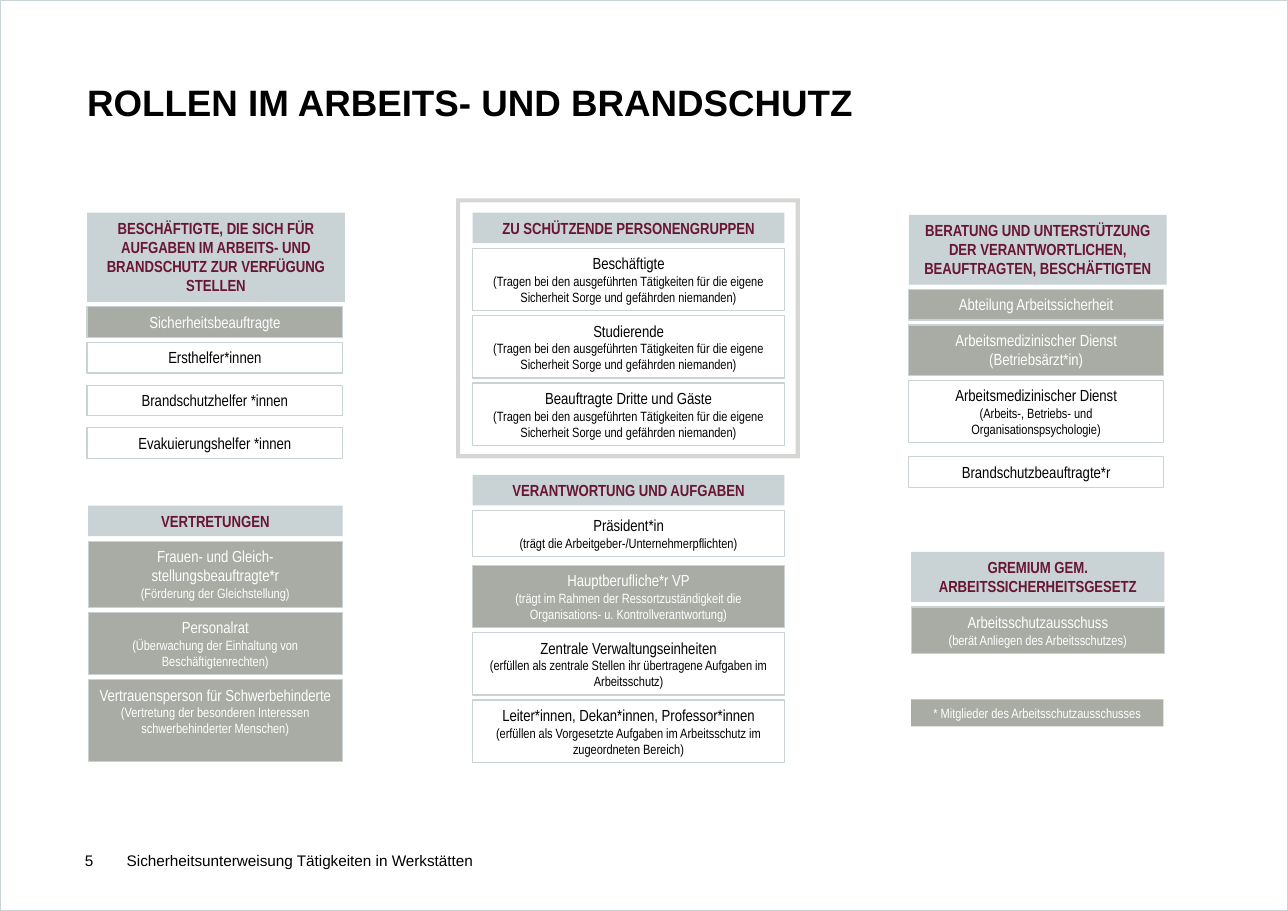
from dataclasses import dataclass

from pptx import Presentation
from pptx import util as u
from pptx.dml.color import RGBColor
from pptx.enum import shapes, text


@dataclass(frozen=True)
class Theme:
    black: str = "000000"
    white: str = "FFFFFF"
    wine: str = "691633"
    mist: str = "C9D2D5"
    stone: str = "A8ACA5"
    frame: str = "D6D7D4"
    body_font: str = "Arial Narrow"
    title_font: str = "Arial"
    title_size: float = 24
    role_size: float = 10.5
    detail_size: float = 8.8
    footer_size: float = 10


@dataclass(frozen=True)
class Role:
    name: str
    detail: str = ""
    member: bool = False  # sits on the committee, shown on stone
    name_lines: int = 1
    detail_lines: int = 0
    gap: float = 0.54


@dataclass(frozen=True)
class Group:
    heading: str
    heading_lines: int
    left: float
    top: float
    width: float
    heading_width: float
    roles: tuple


THEME = Theme()
WIDTH, HEIGHT = u.Inches(11.69), u.Inches(8.27)
# Row heights in percent of the slide's height
PADDING, NAME_LINE, DETAIL_LINE = 1.21, 2.15, 1.75

CARE = ("(Tragen bei den ausgeführten Tätigkeiten für die eigene "
        "Sicherheit Sorge und gefährden niemanden)")

# Positions and widths in percent of the slide
GROUPS = (
    Group("BESCHÄFTIGTE, DIE SICH FÜR AUFGABEN IM ARBEITS- UND BRANDSCHUTZ "
          "ZUR VERFÜGUNG STELLEN", 4, 6.76, 23.34, 19.85, 20.02, (
              Role("Sicherheitsbeauftragte", member=True),
              Role("Ersthelfer*innen"),
              Role("Brandschutzhelfer *innen", gap=1.33),
              Role("Evakuierungshelfer *innen", gap=1.33))),
    Group("VERTRETUNGEN", 1, 6.84, 55.5, 19.76, 19.76, (
        Role("Frauen- und Gleich-stellungsbeauftragte*r",
             "(Förderung der Gleichstellung)", True, 2, 1),
        Role("Personalrat",
             "(Überwachung der Einhaltung von Beschäftigtenrechten)", True, 1, 2),
        Role("Vertrauensperson für Schwerbehinderte",
             "(Vertretung der besonderen Interessen schwerbehinderter Menschen)",
             True, 2, 2))),
    Group("ZU SCHÜTZENDE PERSONENGRUPPEN", 1, 36.7, 23.34, 24.21, 24.21, tuple(
        Role(name, CARE, detail_lines=2)
        for name in ("Beschäftigte", "Studierende", "Beauftragte Dritte und Gäste"))),
    Group("VERANTWORTUNG UND AUFGABEN", 1, 36.7, 52.12, 24.21, 24.21, (
        Role("Präsident*in", "(trägt die Arbeitgeber-/Unternehmerpflichten)",
             detail_lines=1),
        Role("Hauptberufliche*r VP",
             "(trägt im Rahmen der Ressortzuständigkeit die "
             "Organisations- u. Kontrollverantwortung)", True, 1, 2, 0.91),
        Role("Zentrale Verwaltungseinheiten",
             "(erfüllen als zentrale Stellen ihr übertragene Aufgaben im "
             "Arbeitsschutz)", detail_lines=2),
        Role("Leiter*innen, Dekan*innen, Professor*innen",
             "(erfüllen als Vorgesetzte Aufgaben im Arbeitsschutz im "
             "zugeordneten Bereich)", detail_lines=2))),
    Group("BERATUNG UND UNTERSTÜTZUNG DER VERANTWORTLICHEN, BEAUFTRAGTEN, "
          "BESCHÄFTIGTEN", 3, 70.57, 23.58, 19.76, 20.02, (
              Role("Abteilung Arbeitssicherheit", member=True),
              Role("Arbeitsmedizinischer Dienst (Betriebsärzt*in)",
                   member=True, name_lines=2),
              Role("Arbeitsmedizinischer Dienst",
                   "(Arbeits-, Betriebs- und Organisationspsychologie)",
                   detail_lines=2),
              Role("Brandschutzbeauftragte*r", gap=1.57))),
    Group("GREMIUM GEM. ARBEITSSICHERHEITSGESETZ", 2, 70.74, 60.58, 19.67, 19.67, (
        Role("Arbeitsschutzausschuss", "(berät Anliegen des Arbeitsschutzes)",
             True, 1, 1),)),
)


def place(left, top, width, height):
    """Turn percentages of the slide into lengths."""
    return (int(WIDTH * left / 100), int(HEIGHT * top / 100),
            int(WIDTH * width / 100), int(HEIGHT * height / 100))


def row_height(name_lines, detail_lines=0):
    return PADDING + name_lines * NAME_LINE + detail_lines * DETAIL_LINE


def set_all(target, values):
    for key, value in values.items():
        setattr(target, key, value)


def write(paragraph, words, size, color, font=THEME.body_font, bold=False):
    run = paragraph.add_run()
    run.text = words
    set_all(run.font, {"name": font, "size": u.Pt(size), "bold": bold})
    run.font.color.rgb = RGBColor.from_string(color)


def add_outline(slide, kind, area, fill=None, line=None, weight=0.75):
    outline = slide.shapes.add_shape(kind, *place(*area))
    outline.shadow.inherit = False
    if fill:
        outline.fill.solid()
        outline.fill.fore_color.rgb = RGBColor.from_string(fill)
    else:
        outline.fill.background()
    if line:
        outline.line.color.rgb = RGBColor.from_string(line)
        outline.line.width = u.Pt(weight)
    else:
        outline.line.fill.background()
    return outline


def add_box(slide, area, lines, color, fill=None, line=None, bold=False):
    """Box with centred lines, each given as words and size."""
    box = add_outline(slide, shapes.MSO_SHAPE.RECTANGLE, area, fill, line)
    frame = box.text_frame
    set_all(frame, {"word_wrap": True, "vertical_anchor": text.MSO_ANCHOR.TOP})
    for number, (words, size) in enumerate(lines):
        paragraph = frame.add_paragraph() if number else frame.paragraphs[0]
        paragraph.alignment = text.PP_ALIGN.CENTER
        write(paragraph, words, size, color, bold=bold)


def add_group(slide, group):
    height = row_height(group.heading_lines)
    add_box(slide, (group.left, group.top, group.heading_width, height),
            [(group.heading, THEME.role_size)], THEME.wine, THEME.mist, bold=True)
    top = group.top + height
    for role in group.roles:
        top += role.gap
        height = row_height(role.name_lines, role.detail_lines)
        lines = [(role.name, THEME.role_size)]
        if role.detail:
            lines.append((role.detail, THEME.detail_size))
        color, fill = ((THEME.white, THEME.stone) if role.member
                       else (THEME.black, None))
        add_box(slide, (group.left, top, group.width, height), lines,
                color, fill, THEME.mist)
        top += height


def add_title(slide, words):
    title = slide.shapes.title
    title.left, title.top, title.width, title.height = place(6.76, 9.31, 87.08, 16.08)
    set_all(title.text_frame, {
        "margin_left": 0, "margin_top": 0, "margin_right": 0, "margin_bottom": 0,
        "word_wrap": True, "auto_size": text.MSO_AUTO_SIZE.NONE,
        "vertical_anchor": text.MSO_ANCHOR.TOP})
    paragraph = title.text_frame.paragraphs[0]
    set_all(paragraph, {"alignment": text.PP_ALIGN.LEFT, "line_spacing": 0.9})
    write(paragraph, words, THEME.title_size, THEME.black, THEME.title_font, True)


def add_footer(slide, left, width, words):
    footer = slide.shapes.add_textbox(*place(left, 92.02, width, 4.84)).text_frame
    set_all(footer, {"margin_left": 0, "margin_right": 0, "word_wrap": True,
                     "vertical_anchor": text.MSO_ANCHOR.MIDDLE})
    write(footer.paragraphs[0], words, THEME.footer_size, THEME.black,
          THEME.title_font)


def main():
    deck = Presentation()
    deck.slide_width, deck.slide_height = WIDTH, HEIGHT
    slide = deck.slides.add_slide(deck.slide_layouts[5])

    # Slide border, title and footer
    add_outline(slide, shapes.MSO_SHAPE.RECTANGLE, (0, 0, 100, 100),
                line=THEME.mist, weight=1)
    add_title(slide, "ROLLEN IM ARBEITS- UND BRANDSCHUTZ")
    add_footer(slide, 6.59, 2.65, "5")
    add_footer(slide, 9.84, 63.73, "Sicherheitsunterweisung Tätigkeiten in Werkstätten")

    # Groups of roles
    for group in GROUPS:
        add_group(slide, group)

    # Frame around the people to protect
    protected = add_outline(slide, shapes.MSO_SHAPE.FRAME,
                            (35.41, 21.77, 26.69, 28.54), THEME.frame)
    protected.adjustments[0] = 0.016

    # Key to the stone boxes
    add_box(slide, (70.74, 76.78, 19.59, row_height(0, 1)),
            [("* Mitglieder des Arbeitsschutzausschusses", THEME.detail_size)],
            THEME.white, THEME.stone)

    deck.save("out.pptx")


if __name__ == "__main__":
    main()
